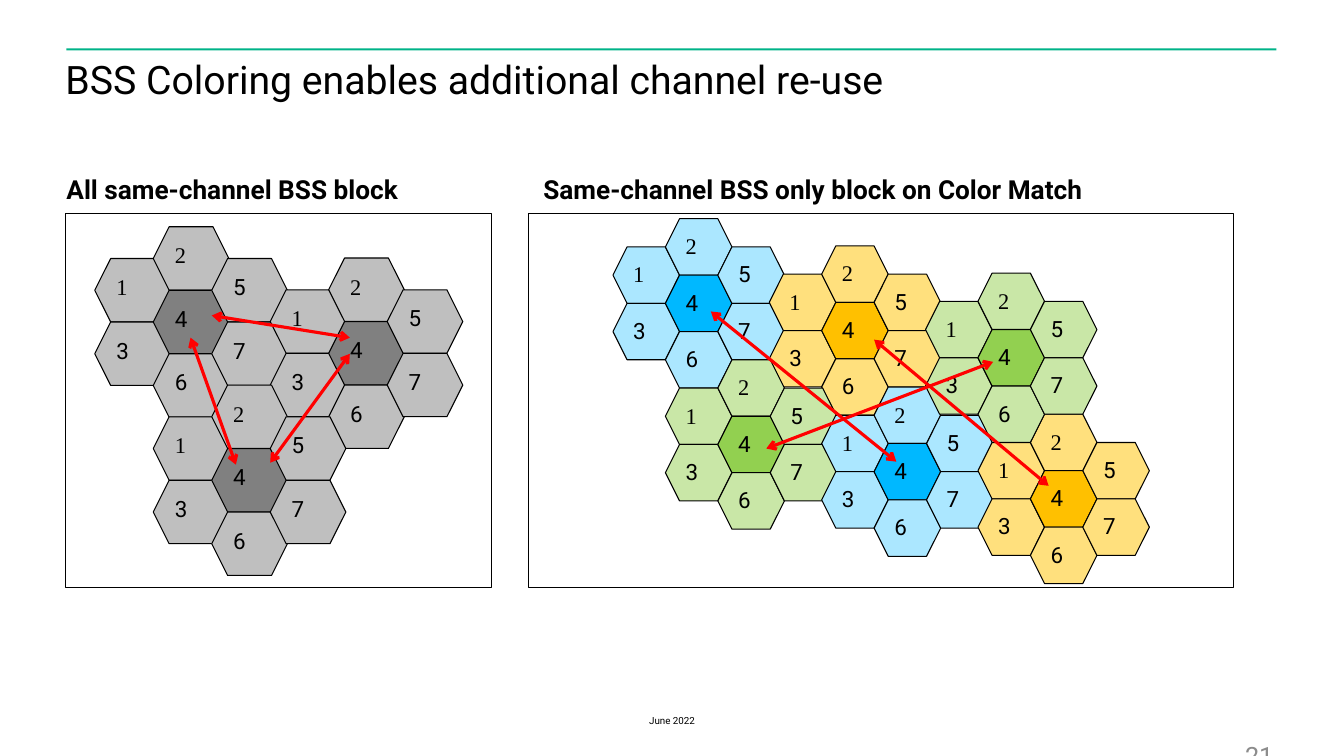
"""Build the slide on channel re-use with BSS coloring."""
from dataclasses import dataclass

from lxml import etree
from pptx import Presentation
from pptx.dml.color import RGBColor
from pptx.enum.shapes import MSO_CONNECTOR as Connector, MSO_SHAPE as Preset
from pptx.enum.text import MSO_ANCHOR as Anchor, PP_ALIGN as Align
from pptx.oxml.ns import qn
from pptx.shapes.autoshape import Shape
from pptx.shapes.shapetree import SlideShapes
from pptx.text.text import TextFrame
from pptx.util import Inches, Pt

Point = tuple[float, float]
Box = tuple[float, float, float, float]

BLACK, RED, GREEN_RULE, PAGE_GRAY = "000000", "FF0000", "00B388", "8C8C8C"
SANS, SERIF = "Roboto", "Times New Roman"
SERIF_CHANNELS = (1, 2)
CENTER_CHANNEL = 4
CELL_STEPS = {1: (-1, -1), 2: (0, -2), 3: (-1, 1), 4: (0, 0),
              5: (1, -1), 6: (0, 2), 7: (1, 1)}


@dataclass(frozen=True)
class Palette:
    light: str
    strong: str


@dataclass(frozen=True)
class Cluster:
    center: Point
    palette: Palette


@dataclass(frozen=True)
class Network:
    cell_size: Point
    step: Point
    clusters: tuple[Cluster, ...]
    conflicts: tuple[tuple[Point, Point], ...]


@dataclass(frozen=True)
class Label:
    box: Box
    text: str
    size: float
    color: str = BLACK
    bold: bool = False
    inset: bool = True
    align: Align = Align.LEFT
    anchor: Anchor = Anchor.TOP
    spacing: float = 1.0


GRAY = Palette("BFBFBF", "808080")
BLUE = Palette("ABE7FF", "00B8FF")
YELLOW = Palette("FFE07D", "FFC000")
GREEN = Palette("C9E7A7", "92D050")

PANELS = ((5.24, 2.12, 6.99, 3.71), (0.65, 2.12, 4.23, 3.71))

NETWORKS = (
    Network((0.75, 0.63), (0.58, 0.315),
            (Cluster((1.52, 2.88), GRAY), Cluster((3.26, 3.19), GRAY),
             Cluster((2.1, 4.45), GRAY)),
            (((2.68, 4.59), (3.47, 3.51)), ((2.34, 4.61), (1.89, 3.35)),
             ((3.47, 3.35), (2.1, 3.13)))),
    Network((0.66, 0.56), (0.52, 0.28),
            (Cluster((6.6, 2.73), BLUE), Cluster((8.15, 3), YELLOW),
             Cluster((7.12, 4.13), GREEN), Cluster((8.67, 4.4), BLUE),
             Cluster((10.22, 4.67), YELLOW), Cluster((9.7, 3.27), GREEN)),
            (((10.4, 4.82), (8.67, 3.37)), ((8.89, 4.58), (7.05, 3.09)),
             ((9.85, 3.59), (7.6, 4.45)))),
)

LABELS = (
    Label((0.65, 0.6, 12.06, 0.95), "BSS Coloring enables additional channel re-use",
          28, inset=False, spacing=0.9),
    Label((0.56, 1.67, 4.69, 0.42), "All same-channel BSS block", 18.7, bold=True),
    Label((5.29, 1.67, 5.92, 0.42), "Same-channel BSS only block on Color Match",
          18.7, bold=True),
    Label((6.12, 7.03, 1.09, 0.23), "June 2022", 7,
          align=Align.CENTER, anchor=Anchor.MIDDLE),
    Label((12.25, 7.29, 0.58, 0.21), "21", 18, PAGE_GRAY),
)


def rgb(color: str) -> RGBColor:
    return RGBColor.from_string(color)


def write(frame: TextFrame, text: str, size: float, font: str = SANS,
          color: str = BLACK, bold: bool = False, align: Align = Align.LEFT) -> None:
    paragraph = frame.paragraphs[0]
    paragraph.alignment = align
    run = paragraph.add_run()
    run.text = text
    run.font.size = Pt(size)
    run.font.name = font
    run.font.bold = bold
    run.font.color.rgb = rgb(color)


def draw_shape(shapes: SlideShapes, preset: Preset, box: Box,
               fill: str | None = None, outline: str | None = BLACK) -> Shape:
    shape = shapes.add_shape(preset, *map(Inches, box))
    shape.shadow.inherit = False
    if fill:
        shape.fill.solid()
        shape.fill.fore_color.rgb = rgb(fill)
    else:
        shape.fill.background()
    if outline:
        shape.line.color.rgb = rgb(outline)
        shape.line.width = Pt(0.75)
    else:
        shape.line.fill.background()
    return shape


def draw_cluster(shapes: SlideShapes, cluster: Cluster, network: Network) -> None:
    left, top = cluster.center
    across, down = network.step
    for channel, (column, row) in CELL_STEPS.items():
        is_center = channel == CENTER_CHANNEL
        fill = cluster.palette.strong if is_center else cluster.palette.light
        box = (left + column * across, top + row * down, *network.cell_size)
        cell = draw_shape(shapes, Preset.HEXAGON, box, fill)
        cell.text_frame.vertical_anchor = Anchor.TOP
        font = SERIF if channel in SERIF_CHANNELS else SANS
        write(cell.text_frame, str(channel), 16, font)


def draw_conflict(shapes: SlideShapes, start: Point, end: Point) -> None:
    arrow = shapes.add_connector(Connector.STRAIGHT, *map(Inches, (*start, *end)))
    arrow.line.color.rgb = rgb(RED)
    arrow.line.width = Pt(2.25)
    outline = arrow.line._get_or_add_ln()
    for tip in ("a:headEnd", "a:tailEnd"):
        etree.SubElement(outline, qn(tip), type="arrow")
    etree.SubElement(arrow._element.spPr, qn("a:effectLst"))


def draw_label(shapes: SlideShapes, label: Label) -> None:
    frame = shapes.add_textbox(*map(Inches, label.box)).text_frame
    frame.word_wrap = True
    frame.vertical_anchor = label.anchor
    if not label.inset:
        frame.margin_left = frame.margin_right = Inches(0)
        frame.margin_top = frame.margin_bottom = Inches(0)
    write(frame, label.text, label.size, color=label.color,
          bold=label.bold, align=label.align)
    frame.paragraphs[0].line_spacing = label.spacing


def main() -> None:
    deck = Presentation()
    deck.slide_width, deck.slide_height = Inches(13.33), Inches(7.5)
    shapes = deck.slides.add_slide(deck.slide_layouts[6]).shapes
    draw_shape(shapes, Preset.RECTANGLE, (0.66, 0.48, 12, 0.02), GREEN_RULE, None)
    for panel in PANELS:
        draw_shape(shapes, Preset.RECTANGLE, panel)
    for network in NETWORKS:
        for cluster in network.clusters:
            draw_cluster(shapes, cluster, network)
        for start, end in network.conflicts:
            draw_conflict(shapes, start, end)
    for label in LABELS:
        draw_label(shapes, label)
    deck.save("out.pptx")


if __name__ == "__main__":
    main()
